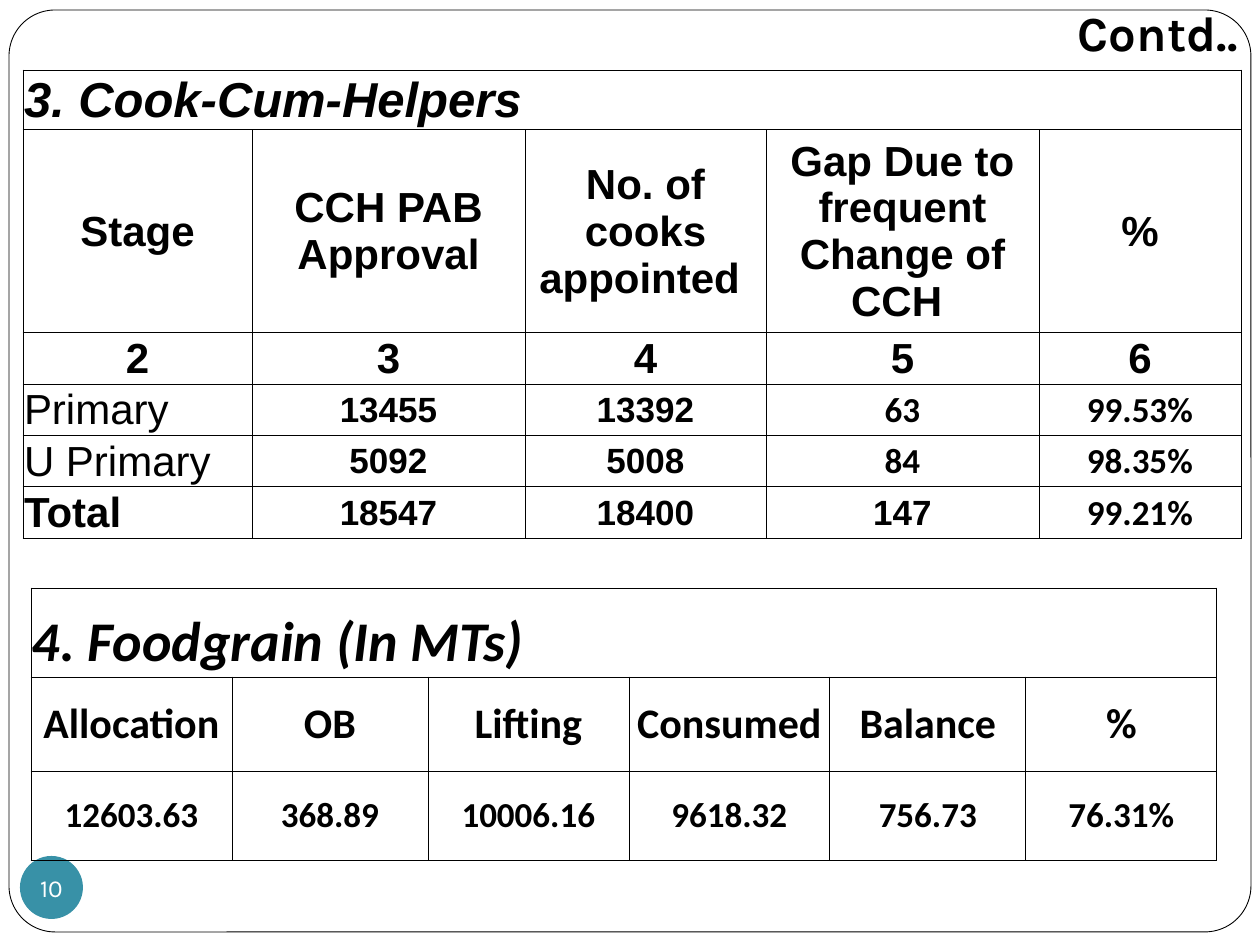
from pptx import Presentation
from pptx.dml.color import RGBColor
from pptx.enum.shapes import MSO_SHAPE as Shape
from pptx.enum.text import MSO_ANCHOR as Anchor, PP_ALIGN as Align
from pptx.oxml import parse_xml
from pptx.oxml.ns import nsdecls
from pptx.util import Pt

PX = 914400 / 126


def px(*sizes):
    return [round(size * PX) for size in sizes]


def write(frame, text, align, color="000000", **look):
    para = frame.paragraphs[0]
    para.alignment = align
    run = para.add_run()
    run.text = text
    run.font.color.rgb = RGBColor.from_string(color)
    for name, value in look.items():
        setattr(run.font, name, value)


deck = Presentation()
deck.slide_width, deck.slide_height = px(1260, 945)
slide = deck.slides.add_slide(deck.slide_layouts[6])
shapes = slide.shapes

panel = shapes.add_shape(Shape.ROUNDED_RECTANGLE, *px(9, 10, 1242, 922))
panel.adjustments[0] = 0.05
panel.shadow.inherit = False
panel.fill.solid()
panel.fill.fore_color.rgb = RGBColor.from_string("FFFFFF")
panel.line.color.rgb = RGBColor.from_string("000000")
panel.line.width = Pt(0.5)

title = shapes.add_textbox(*px(179, -10, 1071, 84)).text_frame
title.word_wrap = True
title.vertical_anchor = Anchor.BOTTOM
title.margin_bottom = px(13)[0]
write(title, "Contd..", Align.RIGHT, name="Karla", size=Pt(28), bold=True)

badge = shapes.add_shape(Shape.OVAL, *px(20, 856, 63, 63))
badge.shadow.inherit = False
badge.fill.solid()
badge.fill.fore_color.rgb = RGBColor.from_string("3891A7")
badge.line.fill.background()
page = badge.text_frame
page.word_wrap = False
page.vertical_anchor = Anchor.MIDDLE
for side in ("left", "top", "right", "bottom"):
    setattr(page, f"margin_{side}", 0)
write(page, "10", Align.CENTER, "FFFFFF", name="Karla", size=Pt(14))

cooks = dict(
    at=(23, 70), font="Arial", top=28, anchor=Anchor.MIDDLE, heads=2,
    wide=(229, 273, 241, 273, 202), high=(56, 188, 48, 48, 48, 48),
    rows=[
        ["3. Cook-Cum-Helpers"],
        ["Stage", "CCH PAB Approval", "No. of cooks appointed ",
         "Gap Due to frequent Change of CCH ", "%"],
        ["2", "3", "4", "5", "6"],
        ["Primary", "13455", "13392", "63", "99.53%"],
        ["U Primary", "5092", "5008", "84", "98.35%"],
        ["Total", "18547", "18400", "147", "99.21%"],
    ],
)
grain = dict(
    at=(31, 588), font="Calibri", top=32, anchor=Anchor.BOTTOM, heads=1,
    wide=(201, 196, 201, 201, 196, 191), high=(89, 94, 89),
    rows=[
        ["4. Foodgrain (In MTs)"],
        ["Allocation", "OB", "Lifting", "Consumed", "Balance", "%"],
        ["12603.63", "368.89", "10006.16", "9618.32", "756.73", "76.31%"],
    ],
)

for data in (cooks, grain):
    wide, high, rows = data["wide"], data["high"], data["rows"]
    box = px(*data["at"], sum(wide), sum(high))
    table = shapes.add_table(len(high), len(wide), *box).table
    table.first_row = table.horz_banding = False
    for col, size in zip(table.columns, px(*wide)):
        col.width = size
    for row, size in zip(table.rows, px(*high)):
        row.height = size
    for cell in table.iter_cells():
        cell.fill.background()
        cell.margin_left = cell.margin_right = cell.margin_top = px(1)[0]
        cell.margin_bottom = 0
        cell.vertical_anchor = Anchor.MIDDLE
        props = cell._tc.get_or_add_tcPr()
        for spot, edge in enumerate("LRTB"):
            props.insert(spot, parse_xml(
                f'<a:ln{edge} {nsdecls("a")} w="6350"><a:solidFill>'
                f'<a:srgbClr val="000000"/></a:solidFill></a:ln{edge}>'))
    table.cell(0, 0).merge(table.cell(0, len(wide) - 1))
    table.cell(0, 0).vertical_anchor = data["anchor"]
    for r, row in enumerate(rows):
        for c, text in enumerate(row):
            body = r > data["heads"]
            label = body and c == 0 and data is cooks
            look = dict(name=data["font"], size=Pt(24), bold=True)
            if r == 0:
                look.update(size=Pt(data["top"]), italic=True)
            elif label:
                look.update(bold=text == "Total")
            elif body:
                look.update(size=Pt(20))
                if text in ("63", "84") or "%" in text:
                    look.update(name="Calibri")
            align = Align.LEFT if r == 0 or label else Align.CENTER
            write(table.cell(r, c).text_frame, text, align, **look)

deck.save("out.pptx")
